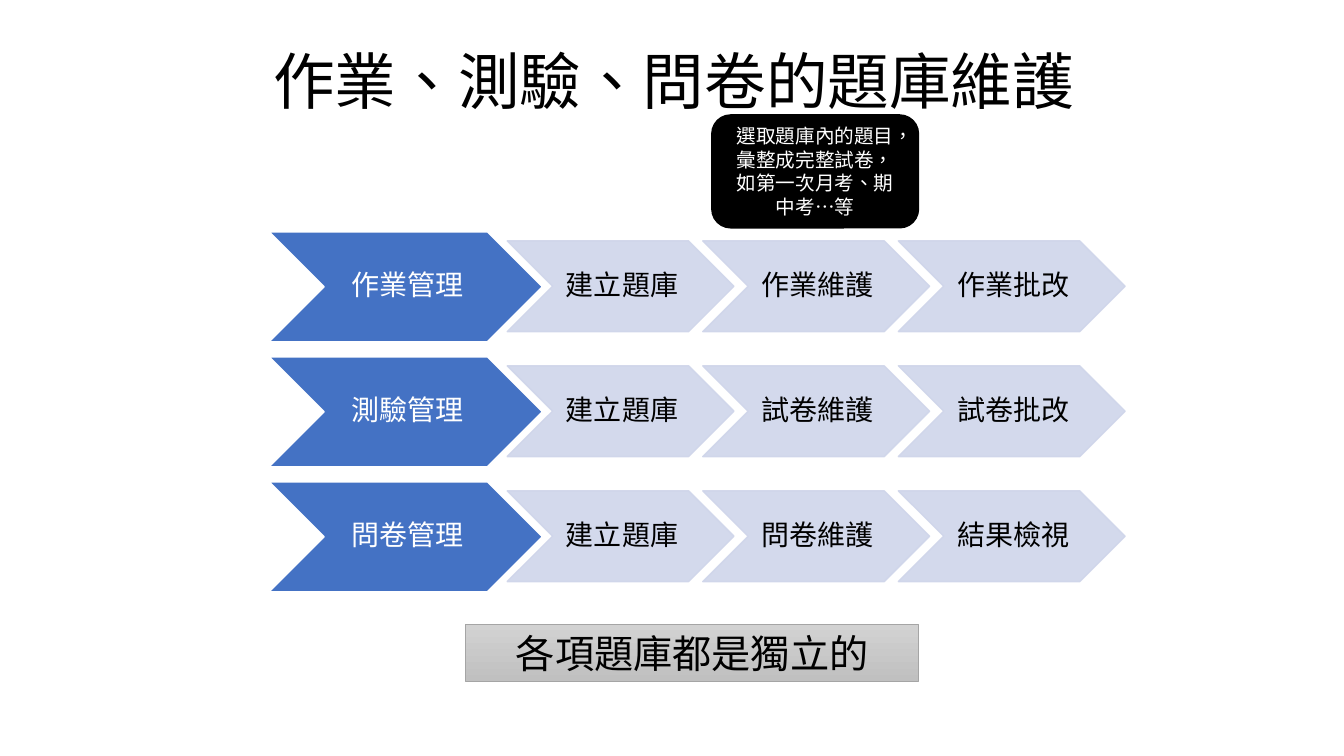
"""Build the slide on maintaining question banks for homework, tests and surveys."""
from dataclasses import dataclass

from lxml.etree import SubElement
from pptx import Presentation
from pptx.dml.color import RGBColor
from pptx.enum.lang import MSO_LANGUAGE_ID
from pptx.enum.shapes import MSO_SHAPE
from pptx.enum.text import MSO_ANCHOR, MSO_AUTO_SIZE, PP_ALIGN
from pptx.oxml.ns import qn
from pptx.util import Emu, Pt

EMU_PER_PX = 9144


@dataclass(frozen=True)
class Theme:
    font: str = "Calibri"
    black: str = "000000"
    white: str = "FFFFFF"
    stage: str = "4472C4"
    step: str = "CFD5EA"
    step_opacity: int = 90
    banner_top: str = "D2D2D2"
    banner_bottom: str = "C0C0C0"
    banner_line: str = "A5A5A5"
    title_size: int = 44
    banner_size: int = 28
    label_size: int = 20
    callout_size: int = 14


class SlideBuilder:
    def __init__(self, page, theme):
        self.page = page
        self.theme = theme

    def place(self, shape, left, top, width, height):
        shape.left, shape.top, shape.width, shape.height = (
            Emu(length * EMU_PER_PX) for length in (left, top, width, height)
        )

    def add_text(self, shape, text, size, color, align=PP_ALIGN.CENTER, spacing=1.0):
        frame = shape.text_frame
        frame.word_wrap = True
        frame.vertical_anchor = MSO_ANCHOR.MIDDLE
        para = frame.paragraphs[0]
        para.alignment = align
        para.line_spacing = spacing
        span = para.add_run()
        span.text = text
        span.font.name = self.theme.font
        span.font.size = Pt(size)
        span.font.color.rgb = RGBColor.from_string(color)
        span.font.language_id = MSO_LANGUAGE_ID.TRADITIONAL_CHINESE
        return frame

    def title(self, text, *box):
        shape = self.page.shapes.title
        self.place(shape, *box)
        frame = self.add_text(shape, text, self.theme.title_size, self.theme.black,
                              PP_ALIGN.LEFT, 0.9)
        frame.auto_size = MSO_AUTO_SIZE.NONE

    def shape(self, preset, box, fill, line, line_width=1):
        shape = self.page.shapes.add_shape(preset, 0, 0, 0, 0)
        self.place(shape, *box)
        shape.shadow.inherit = False
        shape.fill.solid()
        shape.fill.fore_color.rgb = RGBColor.from_string(fill)
        shape.line.color.rgb = RGBColor.from_string(line)
        shape.line.width = Pt(line_width)
        return shape

    def chevron(self, text, box, fill, line, color, opacity=100):
        shape = self.shape(MSO_SHAPE.CHEVRON, box, fill, line)
        if opacity < 100:
            for tone in shape.element.spPr.iter(qn("a:srgbClr")):
                SubElement(tone, qn("a:alpha"), val=str(opacity * 1000))
        frame = self.add_text(shape, text, self.theme.label_size, color, spacing=0.9)
        frame.margin_left = Emu(3 * EMU_PER_PX)
        frame.margin_right = 0
        frame.margin_top = frame.margin_bottom = Emu(EMU_PER_PX)

    def banner(self, text, *box):
        theme = self.theme
        shape = self.shape(MSO_SHAPE.RECTANGLE, box, theme.banner_top,
                           theme.banner_line, 0.5)
        shape.fill.gradient()
        shape.fill.gradient_angle = 270
        tones = (theme.banner_top, theme.banner_bottom)
        for position, (stop, tone) in enumerate(zip(shape.fill.gradient_stops, tones)):
            stop.position = position
            stop.color.rgb = RGBColor.from_string(tone)
        frame = self.add_text(shape, text, theme.banner_size, theme.black)
        frame.vertical_anchor = MSO_ANCHOR.TOP
        frame.auto_size = MSO_AUTO_SIZE.SHAPE_TO_FIT_TEXT

    def callout(self, text, *box):
        theme = self.theme
        shape = self.shape(MSO_SHAPE.ROUNDED_RECTANGLE, box, theme.black, theme.black)
        self.add_text(shape, text, theme.callout_size, theme.white)


def main():
    theme = Theme()
    deck = Presentation()
    deck.slide_width = Emu(1333 * EMU_PER_PX)
    deck.slide_height = Emu(750 * EMU_PER_PX)
    page = deck.slides.add_slide(deck.slide_layouts[5])
    builder = SlideBuilder(page, theme)

    builder.title("作業、測驗、問卷的題庫維護", 261, 29, 850, 109)

    workflows = [
        ("作業管理", "建立題庫", "作業維護", "作業批改"),
        ("測驗管理", "建立題庫", "試卷維護", "試卷批改"),
        ("問卷管理", "建立題庫", "問卷維護", "結果檢視"),
    ]
    for row, (stage, *steps) in enumerate(workflows):
        top = 230 + 124 * row
        builder.chevron(stage, (267, top, 271, 109), theme.stage, theme.white,
                        theme.white)
        for column, step in enumerate(steps):
            builder.chevron(step, (503 + 194 * column, top + 9, 225, 90), theme.step,
                            theme.step, theme.black, theme.step_opacity)

    builder.banner("各項題庫都是獨立的", 462, 619, 449, 57)
    builder.callout("選取題庫內的題目，彙整成完整試卷，如第一次月考、期中考…等",
                    706, 114, 205, 112)
    deck.save("out.pptx")


if __name__ == "__main__":
    main()
